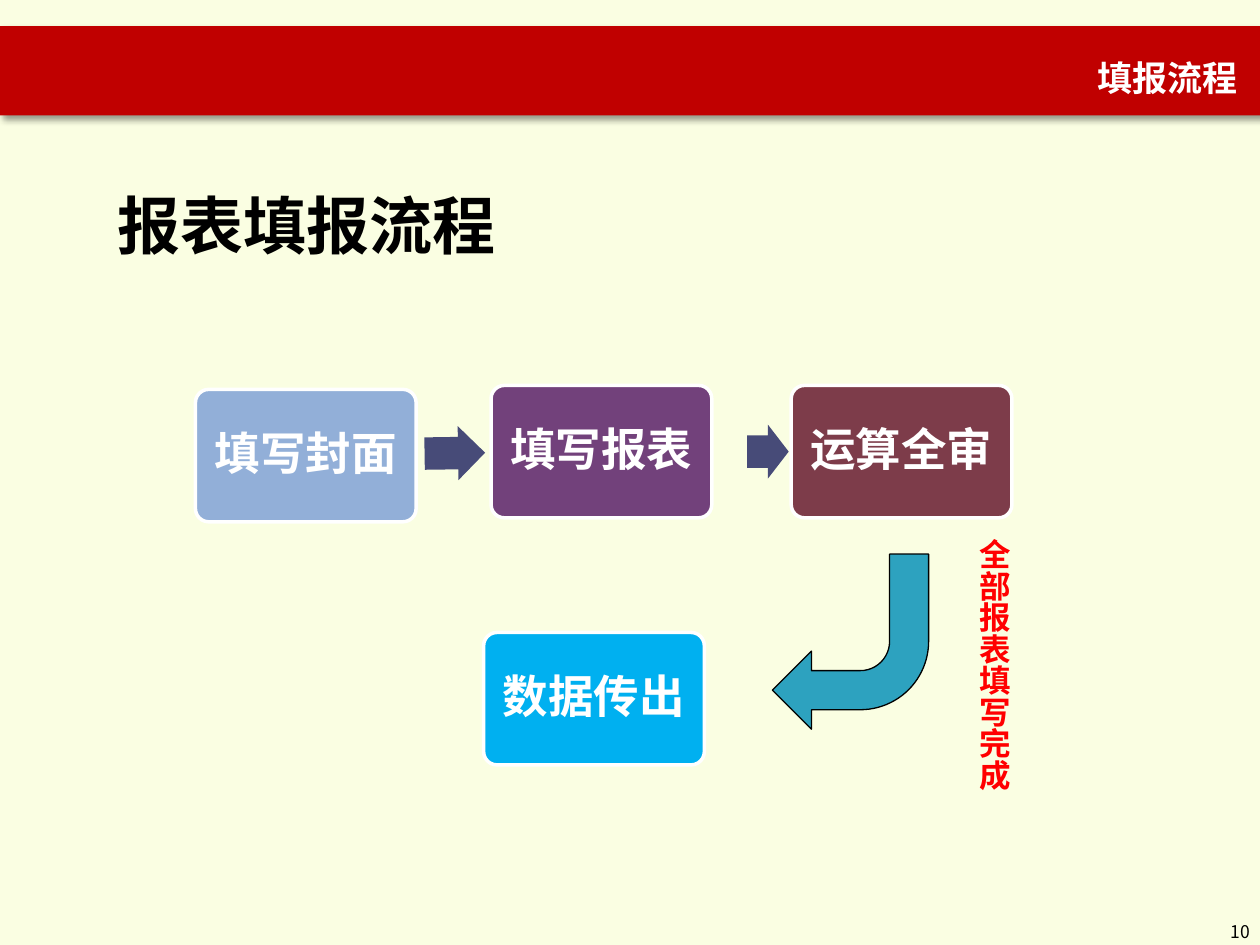
import pptx
import pptx.util
import pptx.dml.color
import pptx.enum.shapes
import pptx.enum.text
import pptx.oxml
import pptx.oxml.ns
from typing import Any, NamedTuple, Optional

Cm = pptx.util.Cm
Pt = pptx.util.Pt
Form = pptx.enum.shapes.MSO_SHAPE
Align = pptx.enum.text.PP_ALIGN
Fit = pptx.enum.text.MSO_AUTO_SIZE
Anchor = pptx.enum.text.MSO_ANCHOR
NOTO = "Noto Sans CJK SC"
SHADE = (
    '<a:effectLst xmlns:a="http://schemas.openxmlformats.org/drawingml/2006/main">'
    '<a:outerShdw blurRad="50800" dist="38100" dir="2700000" algn="tl" rotWithShape="0">'
    '<a:srgbClr val="000000"><a:alpha val="40000"/></a:srgbClr>'
    "</a:outerShdw></a:effectLst>"
)


class Area(NamedTuple):
    left: float
    top: float
    width: float
    height: float


class Style(NamedTuple):
    size: float
    font: str
    color: str
    bold: bool = True


class Step(NamedTuple):
    text: str
    left: float
    top: float
    color: str


class Arrow(NamedTuple):
    form: Any
    area: Area
    color: str
    turn: float = 0
    notch: Optional[float] = None
    line: Optional[str] = None


class Label(NamedTuple):
    text: str
    area: Area
    style: Style
    align: Any = Align.LEFT
    wrap: bool = False
    upright: bool = False


STEP = Style(26, "DejaVu Sans", "FFFFFF")
WIDE, HIGH = 4.45, 2.67

STEPS = [
    Step("填写封面", 3.94, 7.85, "92AFD8"),
    Step("填写报表", 9.9, 7.77, "72417B"),
    Step("运算全审", 15.95, 7.77, "7D3C4A"),
    Step("数据传出", 9.75, 12.75, "00B0F0"),
]
ARROWS = [
    Arrow(Form.RIGHT_ARROW, Area(8.56, 8.59, 1.22, 1.09), "474B78", 359.2, 0.6),
    Arrow(Form.RIGHT_ARROW, Area(15.06, 8.56, 0.84, 1.09), "474B78", 0, 0.6),
    Arrow(Form.BENT_ARROW, Area(15.57, 11.17, 3.15, 3.53), "2DA2BF", 180, None, "000000"),
]
LABELS = [
    Label("10", Area(23.93, 18.44, 1.52, 0.61), Style(10, NOTO, "000000", False),
          Align.RIGHT, True),
    Label("全部报表填写完成", Area(19.25, 10.62, 1.3, 5.31),
          Style(18, "Arial", "FF0000"), upright=True),
    Label("报表填报流程", Area(2.11, 3.63, 8.23, 1.8), Style(36, "Arial", "000000")),
]


def tint(text: str) -> Any:
    return pptx.dml.color.RGBColor.from_string(text)


def span(area: Area) -> list:
    return [Cm(side) for side in area]


def write(frame: Any, text: str, style: Style, align: Any) -> Any:
    line = frame.paragraphs[0]
    line.alignment = align
    run = line.add_run()
    run.text = text
    font = run.font
    font.size = Pt(style.size)
    font.bold = style.bold
    font.color.rgb = tint(style.color)
    font.name = style.font
    east = pptx.oxml.parse_xml(
        '<a:ea xmlns:a="http://schemas.openxmlformats.org/drawingml/2006/main" '
        f'typeface="{style.font}"/>'
    )
    run.font.fill
    run._r.get_or_add_rPr().find(pptx.oxml.ns.qn("a:latin")).addnext(east)
    return run


def block(slide: Any, form: Any, area: Area, color: str,
          line: Optional[str] = None, width: float = 0.75) -> Any:
    shape = slide.shapes.add_shape(form, *span(area))
    shape.shadow.inherit = False
    shape.fill.solid()
    shape.fill.fore_color.rgb = tint(color)
    if line:
        shape.line.color.rgb = tint(line)
        shape.line.width = Pt(width)
    else:
        shape.line.fill.background()
    return shape


def head(slide: Any) -> None:
    band = block(slide, Form.RECTANGLE, Area(0, 0.53, 25.45, 1.8), "C00000")
    props = band.element.spPr
    props.remove(props.find(pptx.oxml.ns.qn("a:effectLst")))
    props.append(pptx.oxml.parse_xml(SHADE))
    title = slide.shapes.title
    title.element.addprevious(band.element)
    title.left, title.top, title.width, title.height = span(Area(6.07, 0.84, 19.13, 1.19))
    frame = title.text_frame
    frame.auto_size = Fit.SHAPE_TO_FIT_TEXT
    frame.vertical_anchor = Anchor.TOP
    run = write(frame, "填报流程", Style(20, NOTO, "FFFFFF"), Align.RIGHT)
    frame.paragraphs[0].line_spacing = 1.2
    fill = run._r.get_or_add_rPr().find(pptx.oxml.ns.qn("a:solidFill"))
    fill.addnext(pptx.oxml.parse_xml(SHADE))


def draw_step(slide: Any, step: Step) -> None:
    area = Area(step.left, step.top, WIDE, HIGH)
    shape = block(slide, Form.ROUNDED_RECTANGLE, area, step.color, "FFFFFF", 2)
    shape.adjustments[0] = 0.1
    frame = shape.text_frame
    frame.word_wrap = False
    frame.vertical_anchor = Anchor.MIDDLE
    write(frame, step.text, STEP, Align.CENTER)
    frame.paragraphs[0].line_spacing = 0.9


def draw_arrow(slide: Any, arrow: Arrow) -> None:
    shape = block(slide, arrow.form, arrow.area, arrow.color, arrow.line)
    shape.rotation = arrow.turn
    if arrow.notch is not None:
        shape.adjustments[0] = arrow.notch


def draw_label(slide: Any, label: Label) -> None:
    box = slide.shapes.add_textbox(*span(label.area))
    frame = box.text_frame
    frame.word_wrap = label.wrap
    if not label.wrap:
        frame.auto_size = Fit.SHAPE_TO_FIT_TEXT
    if label.upright:
        box.element.txBody.bodyPr.set("vert", "eaVert")
    write(frame, label.text, label.style, label.align)


def main() -> None:
    deck = pptx.Presentation()
    deck.slide_width, deck.slide_height = Cm(25.4), Cm(19.05)
    slide = deck.slides.add_slide(deck.slide_layouts[5])
    slide.background.fill.solid()
    slide.background.fill.fore_color.rgb = tint("FAFEE2")
    head(slide)
    for step in STEPS:
        draw_step(slide, step)
    for arrow in ARROWS:
        draw_arrow(slide, arrow)
    for label in LABELS:
        draw_label(slide, label)
    deck.save("out.pptx")


if __name__ == "__main__":
    main()
